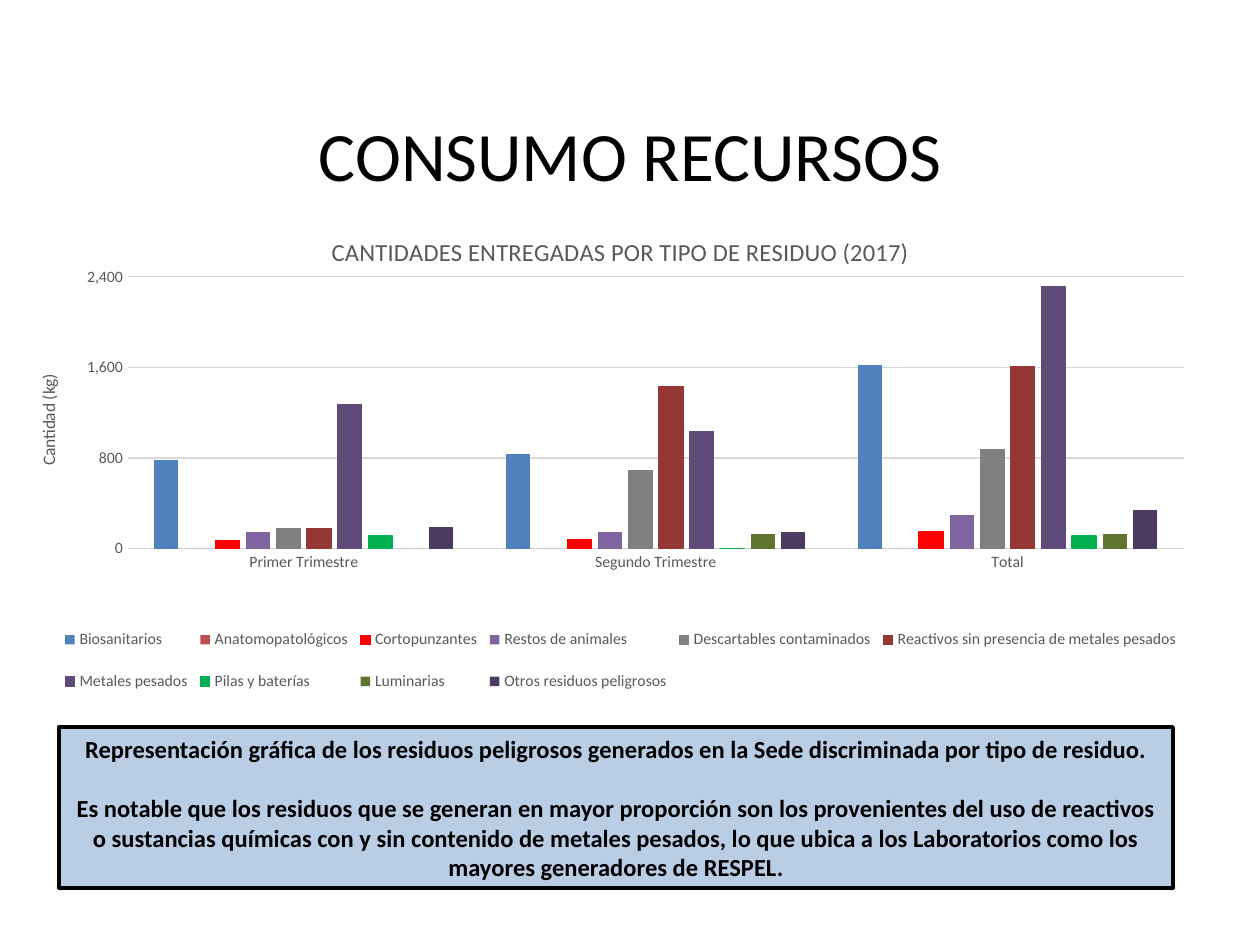
from lxml.etree import SubElement
from pptx import Presentation
from pptx.chart.data import CategoryChartData
from pptx.dml.color import RGBColor
from pptx.enum.chart import XL_CHART_TYPE, XL_LEGEND_POSITION, XL_TICK_MARK
from pptx.enum.shapes import MSO_SHAPE
from pptx.enum.text import MSO_ANCHOR, PP_ALIGN
from pptx.oxml.ns import qn
from pptx.util import Inches, Pt

GREY = "595959"
PALE = "D9D9D9"
PERIODS = ["Primer Trimestre", "Segundo Trimestre", "Total"]
WASTE = [
    ("Biosanitarios", (780, 840, 1620), "4F81BD", False),
    ("Anatomopatológicos", (0, 0, 0), "C0504D", False),
    ("Cortopunzantes", (70, 80, 150), "FF0000", True),
    ("Restos de animales", (150, 150, 300), "8064A2", False),
    ("Descartables contaminados", (180, 690, 870), "808080", True),
    ("Reactivos sin presencia de metales pesados", (180, 1430, 1610), "953735", True),
    ("Metales pesados", (1270, 1030, 2310), "604A7B", True),
    ("Pilas y baterías", (110, 0, 110), "00B050", True),
    ("Luminarias", (0, 130, 130), "5F7530", False),
    ("Otros residuos peligrosos", (190, 150, 340), "4D3B62", False),
]
NOTES = [
    "Representación gráfica de los residuos peligrosos generados en la Sede "
    "discriminada por tipo de residuo.",
    "Es notable que los residuos que se generan en mayor proporción son los "
    "provenientes del uso de reactivos o sustancias químicas con y sin contenido "
    "de metales pesados, lo que ubica a los Laboratorios como los mayores "
    "generadores de RESPEL.",
]


def color(code):
    return RGBColor.from_string(code)


def style(font, size, code, bold=False):
    font.name = "Calibri"
    font.size = Pt(size)
    font.bold = bold
    font.color.rgb = color(code)


def stroke(line, code, width):
    line.color.rgb = color(code)
    line.width = Pt(width)


def write(frame, texts, size, bold=False, gap=0):
    frame.word_wrap = True
    frame.vertical_anchor = MSO_ANCHOR.MIDDLE
    for i, text in enumerate(texts):
        para = frame.add_paragraph() if i else frame.paragraphs[0]
        para.text = text
        para.alignment = PP_ALIGN.CENTER
        para.space_before = Pt(gap if i else 0)
        style(para.font, size, "000000", bold)


def add_title(slide, text):
    box = slide.shapes.add_textbox(Inches(0.69), Inches(0.86), Inches(8.62), Inches(0.72))
    write(box.text_frame, [text], 39.6)


def add_panel(slide, texts):
    box = slide.shapes.add_shape(
        MSO_SHAPE.RECTANGLE, Inches(0.47), Inches(5.77), Inches(8.84), Inches(1.28)
    )
    box.shadow.inherit = False
    box.fill.solid()
    box.fill.fore_color.rgb = color("B9CDE5")
    stroke(box.line, "000000", 2)
    write(box.text_frame, texts, 14, True, 17)


def place(parent, index, bounds, inner=False):
    for old in parent.findall(qn("c:layout")):
        parent.remove(old)
    layout = SubElement(parent, qn("c:layout"))
    parent.insert(index, layout)
    manual = SubElement(layout, qn("c:manualLayout"))
    parts = [("layoutTarget", "inner")] if inner else []
    parts += [("xMode", "edge"), ("yMode", "edge")]
    parts += zip("xywh", bounds)
    for tag, value in parts:
        SubElement(manual, qn(f"c:{tag}")).set("val", str(value))


def label(title, text, size):
    title.text_frame.text = text
    style(title.text_frame.paragraphs[0].font, size, GREY)


def set_axes(chart):
    cats, vals = chart.category_axis, chart.value_axis
    for axis in (cats, vals):
        axis.major_tick_mark = axis.minor_tick_mark = XL_TICK_MARK.NONE
        style(axis.tick_labels.font, 9, GREY)
    stroke(cats.format.line, PALE, 0.75)
    vals.format.line.fill.background()
    vals.minimum_scale, vals.maximum_scale, vals.major_unit = 0, 2400, 800
    vals.tick_labels.number_format = "#,##0"
    vals.tick_labels.number_format_is_linked = False
    stroke(vals.major_gridlines.format.line, PALE, 0.75)
    label(vals.axis_title, "Cantidad (kg)", 10)


def set_legend(chart):
    chart.has_legend = True
    legend = chart.legend
    legend.position = XL_LEGEND_POSITION.BOTTOM
    legend.include_in_layout = False
    style(legend.font, 9, GREY)
    place(legend._element, 1, (0.02, 0.74, 0.96, 0.2))


def add_graph(slide):
    data = CategoryChartData(number_format="#,##0")
    data.categories = PERIODS
    for name, values, _, _ in WASTE:
        data.add_series(name, values)
    chart = slide.shapes.add_chart(
        XL_CHART_TYPE.COLUMN_CLUSTERED,
        Inches(0.27), Inches(1.69), Inches(9.31), Inches(4.23), data,
    ).chart
    style(chart.font, 10, "000000")
    chart.has_title = True
    label(chart.chart_title, "CANTIDADES ENTREGADAS POR TIPO DE RESIDUO (2017)", 14)
    plot = chart.plots[0]
    plot.gap_width, plot.overlap = 219, -27
    plot.vary_by_categories = False
    for series, (_, _, code, edged) in zip(plot.series, WASTE):
        series.invert_if_negative = False
        series.format.fill.solid()
        series.format.fill.fore_color.rgb = color(code)
        if edged:
            stroke(series.format.line, code, 0.75)
    set_axes(chart)
    set_legend(chart)
    area = chart._chartSpace.find(".//" + qn("c:plotArea"))
    place(area, 0, (0.08, 0.12, 0.9, 0.51), True)


def main():
    deck = Presentation()
    deck.slide_width, deck.slide_height = Inches(10), Inches(7.5)
    slide = deck.slides.add_slide(deck.slide_layouts[6])
    add_title(slide, "CONSUMO RECURSOS")
    add_panel(slide, NOTES)
    add_graph(slide)
    deck.save("out.pptx")


if __name__ == "__main__":
    main()
